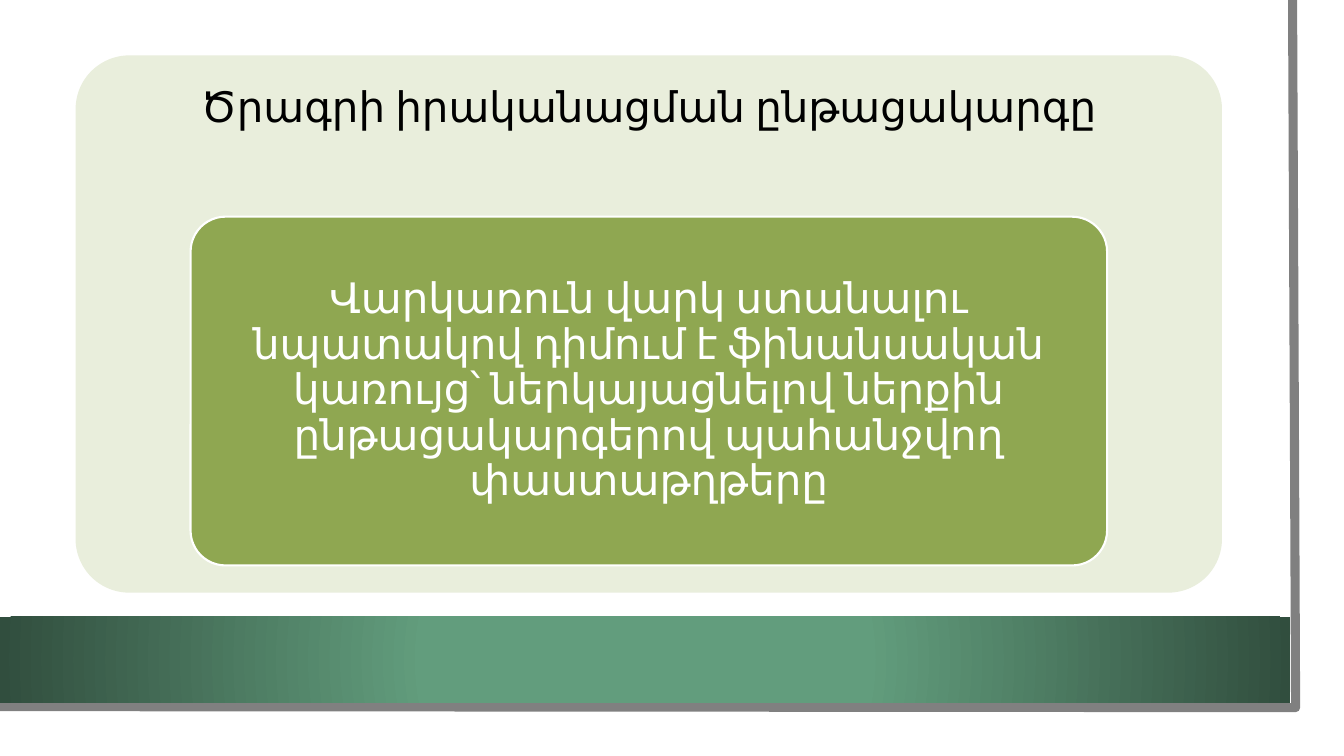
from dataclasses import dataclass
from typing import Optional

from lxml.etree import SubElement
from pptx import Presentation
from pptx.dml.color import RGBColor
from pptx.enum.shapes import MSO_SHAPE as Shape
from pptx.enum.text import MSO_ANCHOR as Anchor, PP_ALIGN as Align
from pptx.oxml.ns import qn
from pptx.util import Inches, Pt

WHITE = RGBColor(0xFF, 0xFF, 0xFF)
BLACK = RGBColor(0x00, 0x00, 0x00)
EDGE_GREY = RGBColor(0x80, 0x80, 0x80)
PALE_GREEN = RGBColor(0xE9, 0xEE, 0xDC)
LEAF_GREEN = RGBColor(0x8F, 0xA7, 0x51)
BAND_LIGHT = RGBColor(0x62, 0x9D, 0x7D)
BAND_DARK = RGBColor(0x31, 0x4E, 0x3E)

CELL = Inches(0.1)  # side of one column and one row of the grid


def cells(count: float) -> int:
    return round(count * CELL)


@dataclass(frozen=True)
class Area:
    column: float
    row: float
    columns: float
    rows: float

    def box(self) -> tuple[int, ...]:
        return tuple(map(cells, (self.column, self.row, self.columns, self.rows)))


@dataclass(frozen=True)
class Panel:
    area: Area
    fill: RGBColor
    kind: Shape = Shape.ROUNDED_RECTANGLE
    line: Optional[RGBColor] = None


SHEET = Panel(Area(0, 0, 131, 72.7), WHITE, Shape.RECTANGLE)
BAND = Panel(Area(0, 61.2, 128, 8.5), BAND_LIGHT, Shape.RECTANGLE)
PROCEDURE = Panel(Area(7.5, 5.5, 113.7, 53.3), PALE_GREEN)
STEP = Panel(Area(18.9, 21.5, 90.9, 34.6), LEAF_GREEN, line=WHITE)
HEADING_AREA = Area(7.5, 5.5, 113.7, 16)
STEP_TEXT_AREA = Area(19.9, 22.5, 88.9, 32.6)
EDGE_POINTS = ((128.2, 0), (128.5, 70.2), (-0.3, 70.1))


def draw_panel(slide, panel: Panel):
    shape = slide.shapes.add_shape(panel.kind, *panel.area.box())
    shape.shadow.inherit = False
    shape.fill.solid()
    shape.fill.fore_color.rgb = panel.fill
    if panel.kind == Shape.ROUNDED_RECTANGLE:
        shape.adjustments[0] = 0.1
    if panel.line is None:
        shape.line.fill.background()
    else:
        shape.line.color.rgb = panel.line
        shape.line.width = Pt(1.5)
    return shape


def add_radial_gradient(shape) -> None:
    shape.fill.gradient()
    stops = ((0.34, BAND_LIGHT), (1, BAND_DARK))
    for stop, (position, color) in zip(shape.fill.gradient_stops, stops):
        stop.position = position
        stop.color.rgb = color
    gradient = shape.element.spPr.find(qn("a:gradFill"))
    gradient.remove(gradient.find(qn("a:lin")))
    circle = SubElement(gradient, qn("a:path"), {"path": "circle"})
    SubElement(circle, qn("a:fillToRect"), dict.fromkeys("ltrb", "50000"))


def draw_edge(slide) -> None:
    start, *others = [(cells(x), cells(y)) for x, y in EDGE_POINTS]
    builder = slide.shapes.build_freeform(*start)
    builder.add_line_segments(others, close=False)
    edge = builder.convert_to_shape()
    edge.shadow.inherit = False
    edge.fill.background()
    edge.line.color.rgb = EDGE_GREY
    edge.line.width = Pt(6.5)


def write(slide, area: Area, text: str, *, color: RGBColor, anchor: Anchor,
          side: float, top: float, bottom: float, size: float = 30) -> None:
    frame = slide.shapes.add_textbox(*area.box()).text_frame
    frame.word_wrap = True
    frame.vertical_anchor = anchor
    frame.margin_left = frame.margin_right = cells(side)
    frame.margin_top, frame.margin_bottom = cells(top), cells(bottom)
    paragraph = frame.paragraphs[0]
    paragraph.alignment = Align.CENTER
    paragraph.line_spacing = 0.9
    run = paragraph.add_run()
    run.text = text
    run.font.name = "Roboto"
    run.font.size = Pt(size)
    run.font.color.rgb = color


def main() -> None:
    deck = Presentation()
    deck.slide_width, deck.slide_height = Inches(13.33), Inches(7.5)
    slide = deck.slides.add_slide(deck.slide_layouts[6])

    # Sheet with its grey edge and green band
    draw_panel(slide, SHEET)
    draw_edge(slide)
    add_radial_gradient(draw_panel(slide, BAND))

    # Procedure panel and its heading
    draw_panel(slide, PROCEDURE)
    write(slide, HEADING_AREA, "Ծրագրի իրականացման ընթացակարգը",
          color=BLACK, anchor=Anchor.TOP, side=1.2, top=3.1, bottom=1.2)

    # First step
    draw_panel(slide, STEP)
    write(slide, STEP_TEXT_AREA,
          "Վարկառուն վարկ ստանալու նպատակով դիմում է ֆինանսական կառույց՝ "
          "ներկայացնելով ներքին ընթացակարգերով պահանջվող փաստաթղթերը",
          color=WHITE, anchor=Anchor.MIDDLE, side=0.8, top=0.6, bottom=0.6)

    deck.save("out.pptx")


if __name__ == "__main__":
    main()
